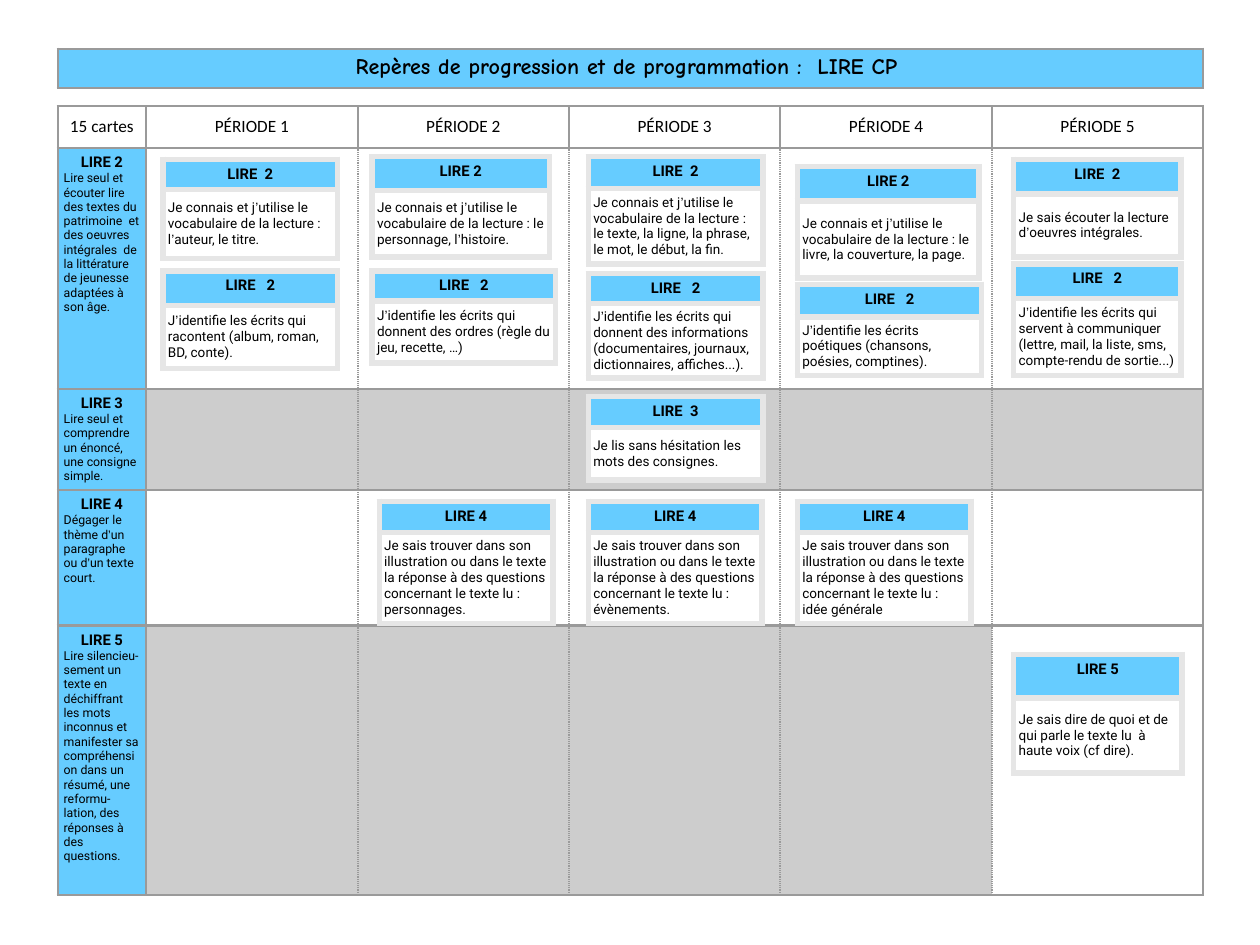
from dataclasses import dataclass
from itertools import groupby

from lxml import etree
from pptx import Presentation
from pptx import util as u
from pptx.dml.color import RGBColor
from pptx.enum import text
from pptx.oxml import ns


@dataclass(frozen=True)
class Theme:
    blue: str = "66CCFF"
    grey: str = "CDCDCD"
    white: str = "FFFFFF"
    black: str = "000000"
    clear: str = ""
    grid_line: str = "9A9A9A"
    card_line: str = "E6E6E6"
    title: tuple = ("Comic Neue", 18, True)
    period: tuple = ("Calibri", 14, False)
    heading: tuple = ("Roboto", 12, True)
    skill: tuple = ("Roboto", 10, False)
    card: tuple = ("Roboto", 11, False)
    apostrophe_font: str = "Arial"
    narrow_inset: float = 4 / 72
    wide_inset: float = 5 / 72


THEME = Theme()
CENTER = text.PP_ALIGN.CENTER
LEFT = text.PP_ALIGN.LEFT
TOP = text.MSO_ANCHOR.TOP
MIDDLE = text.MSO_ANCHOR.MIDDLE

TITLE = "Repères de progression et de programmation :  LIRE CP "
TITLE_BOX = (0.65, 0.55, 12.93, 0.44)
GRID_BOX = (0.65, 1.2, 12.93, 8.9)
LABEL_WIDTH = 1
PERIOD_COUNT = 5
HEADER_HEIGHT = 0.47

SKILLS = [
    ("LIRE 2", 2.72, [THEME.clear] * 5, "Lire seul et écouter lire des textes du patrimoine  "
     "et des oeuvres intégrales  de la littérature de jeunesse adaptées à son âge."),
    ("LIRE 3", 1.14, [THEME.grey] * 5,
     "Lire seul et comprendre un énoncé, une consigne simple."),
    ("LIRE 4", 1.53, [THEME.clear] * 5,
     "Dégager le thème d’un paragraphe ou d’un texte court."),
    ("LIRE 5", 3.04, [THEME.grey] * 4 + [THEME.white],
     "Lire silencieu-sement un texte en déchiffrant les mots inconnus et manifester sa "
     "compréhension dans un résumé, une reformu-lation, des réponses à des questions."),
]

VOCABULARY = "Je connais et j’utilise le vocabulaire de la lecture : "
WRITINGS = "J’identifie les écrits "
QUESTIONS = ("Je sais trouver dans son illustration ou dans le texte la réponse "
             "à des questions concernant le texte lu : ")

CARDS = [
    ((9, 1.88, 2.05, 1.26), 0.39, "LIRE 2",
     VOCABULARY + "le livre, la couverture, la page."),
    ((1.84, 1.8, 1.97, 1.12), 0.34, "LIRE  2", VOCABULARY + "l’auteur, le titre."),
    ((6.64, 1.77, 1.97, 1.21), 0.36, "LIRE  2",
     VOCABULARY + "le texte, la ligne, la phrase, le mot, le début, la fin."),
    ((4.2, 1.77, 2, 1.13), 0.38, "LIRE 2", VOCABULARY + "le personnage, l’histoire."),
    ((4.28, 5.66, 1.96, 1.38), 0.35, "LIRE 4", QUESTIONS + "personnages."),
    ((11.44, 1.8, 1.89, 1.1), 0.39, "LIRE  2",
     "Je sais écouter la lecture d’oeuvres intégrales."),
    ((11.44, 7.39, 1.9, 1.34), 0.49, "LIRE 5",
     "Je sais dire de quoi et de qui parle le texte lu  à haute voix (cf dire)."),
    ((6.64, 4.48, 1.97, 0.94), 0.35, "LIRE  3",
     "Je lis sans hésitation les   mots des consignes."),
    ((4.2, 3.06, 2.07, 1.04), 0.34, "LIRE   2",
     WRITINGS + "qui donnent des ordres (règle du jeu, recette, …)"),
    ((1.84, 3.06, 1.97, 1.1), 0.39, "LIRE   2",
     WRITINGS + "qui racontent (album, roman, BD, conte)."),
    ((9, 3.21, 2.08, 1.03), 0.37, "LIRE   2",
     WRITINGS + "poétiques (chansons, poésies, comptines)."),
    ((6.64, 3.09, 1.97, 1.18), 0.34, "LIRE   2", WRITINGS + "qui donnent des informations "
     "(documentaires, journaux, dictionnaires, affiches...)."),
    ((11.44, 2.98, 1.89, 1.26), 0.39, "LIRE   2", WRITINGS + "qui servent à communiquer "
     "(lettre, mail, la liste, sms, compte-rendu de sortie...)"),
    ((6.64, 5.66, 1.96, 1.38), 0.35, "LIRE 4", QUESTIONS + "évènements."),
    ((9, 5.66, 1.96, 1.38), 0.35, "LIRE 4", QUESTIONS + "idée générale"),
]


def set_all(target, values):
    for name, value in values.items():
        setattr(target, name, value)


def write(paragraph, words, style, alignment=LEFT):
    font_name, size, bold = style
    paragraph.alignment = alignment
    for is_apostrophe, letters in groupby(words, lambda letter: letter == "’"):
        run = paragraph.add_run()
        run.text = "".join(letters)
        set_all(run.font, {"name": THEME.apostrophe_font if is_apostrophe else font_name,
                           "size": u.Pt(size), "bold": bold})
        run.font.color.rgb = RGBColor.from_string(THEME.black)


def style_cell(cell, fill, line, width, inset, anchor, dotted=""):
    sides = ("left", "top", "right", "bottom")
    set_all(cell, {f"margin_{side}": u.Inches(inset) for side in sides})
    cell.vertical_anchor = anchor
    properties = cell._tc.get_or_add_tcPr()
    for side in "LRTB":
        border = etree.SubElement(properties, ns.qn(f"a:ln{side}"), w=str(u.Pt(width)))
        solid = etree.SubElement(border, ns.qn("a:solidFill"))
        etree.SubElement(solid, ns.qn("a:srgbClr"), val=line)
        etree.SubElement(border, ns.qn("a:prstDash"),
                         val="sysDot" if side in dotted else "solid")
    if fill:
        cell.fill.solid()
        cell.fill.fore_color.rgb = RGBColor.from_string(fill)
    else:
        cell.fill.background()


def add_plain_table(slide, box, widths, heights):
    table = slide.shapes.add_table(len(heights), len(widths), *map(u.Inches, box)).table
    set_all(table, {"first_row": False, "horz_banding": False})
    for column, width in zip(table.columns, widths):
        column.width = u.Inches(width)
    for row, height in zip(table.rows, heights):
        row.height = u.Inches(height)
    return table


def add_title(slide, box):
    cell = add_plain_table(slide, box, [box[2]], [box[3]]).cell(0, 0)
    style_cell(cell, THEME.blue, THEME.grid_line, 2, THEME.wide_inset, TOP)
    write(cell.text_frame.paragraphs[0], TITLE, THEME.title, CENTER)


def add_grid(slide, box):
    period_width = (box[2] - LABEL_WIDTH) / PERIOD_COUNT
    table = add_plain_table(slide, box, [LABEL_WIDTH] + [period_width] * PERIOD_COUNT,
                            [HEADER_HEIGHT] + [skill[1] for skill in SKILLS])
    headers = ["15 cartes"] + [f"PÉRIODE {n}" for n in range(1, PERIOD_COUNT + 1)]
    for column, header in enumerate(headers):
        cell = table.cell(0, column)
        style_cell(cell, THEME.clear, THEME.grid_line, 2, THEME.narrow_inset, MIDDLE)
        write(cell.text_frame.paragraphs[0], header, THEME.period, CENTER)
    for row, (heading, _, fills, description) in enumerate(SKILLS, 1):
        label = table.cell(row, 0)
        style_cell(label, THEME.blue, THEME.grid_line, 2, THEME.wide_inset, TOP)
        write(label.text_frame.paragraphs[0], heading, THEME.heading, CENTER)
        write(label.text_frame.add_paragraph(), description, THEME.skill)
        for period, fill in enumerate(fills, 1):
            dotted = ("L" if period > 1 else "") + ("R" if period < PERIOD_COUNT else "")
            style_cell(table.cell(row, period), fill, THEME.grid_line, 2,
                       THEME.narrow_inset, TOP, dotted)


def add_card(slide, box, heading_height, heading, body):
    table = add_plain_table(slide, box, [box[2]], [heading_height, box[3] - heading_height])
    parts = [(heading, THEME.heading, CENTER, THEME.blue, THEME.wide_inset, TOP),
             (body, THEME.card, LEFT, THEME.white, THEME.narrow_inset, MIDDLE)]
    for row, (words, style, alignment, fill, inset, anchor) in enumerate(parts):
        cell = table.cell(row, 0)
        style_cell(cell, fill, THEME.card_line, 5, inset, anchor)
        write(cell.text_frame.paragraphs[0], words, style, alignment)


def main():
    presentation = Presentation()
    set_all(presentation, {"slide_width": u.Inches(14.22), "slide_height": u.Inches(10.67)})
    slide = presentation.slides.add_slide(presentation.slide_layouts[6])
    add_grid(slide, GRID_BOX)
    add_title(slide, TITLE_BOX)
    for card in CARDS:
        add_card(slide, *card)
    presentation.save("out.pptx")


if __name__ == "__main__":
    main()
